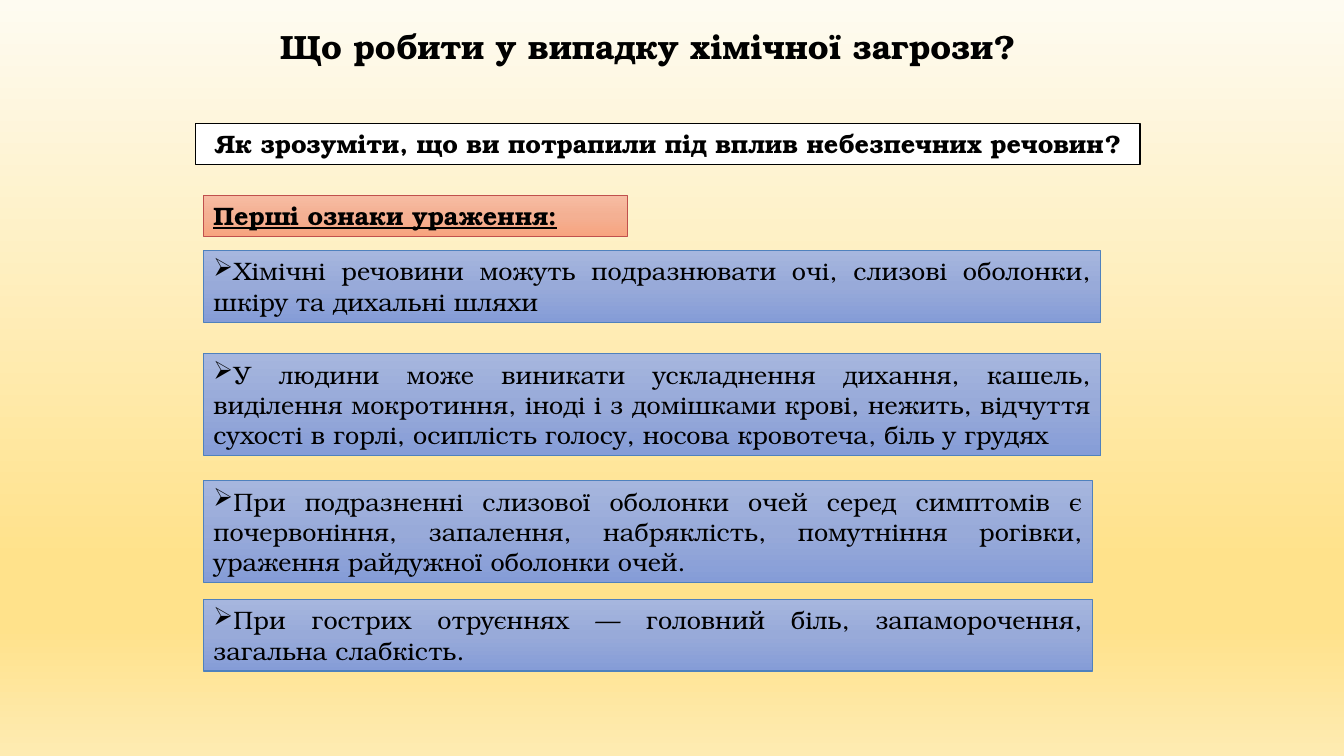
from lxml.etree import SubElement
from pptx import Presentation
from pptx.dml.color import RGBColor
from pptx.enum.shapes import MSO_SHAPE as Shape
from pptx.enum.text import MSO_ANCHOR as Anchor, PP_ALIGN as Align
from pptx.oxml.ns import qn
from pptx.util import Cm, Pt

FONT = "TeX Gyre Bonum"
BULLET_FONT = "Wingdings"
COLOURS = {
    "text": "000000",
    "question": "FFFFFF",
    "heading_line": "C0504D",
    "sign_line": "4F81BD",
}
GRADIENTS = {
    "page": [(0, "FEFBF1"), (74, "FFE28B"), (83, "FFE28B"), (100, "FEEBB2")],
    "heading": [(0, "F7BCA2"), (50, "F4B093"), (100, "F7A47F")],
    "sign": [(0, "A6B6DE"), (50, "98AAD9"), (100, "859CD7")],
}
COLUMN_LEFT = 5.13
SIGNS = [
    (6.32, 22.61, 1.8, "Хімічні речовини можуть подразнювати очі, слизові оболонки, "
     "шкіру та дихальні шляхи"),
    (8.92, 22.61, 2.57, "У людини може виникати ускладнення дихання, кашель, виділення "
     "мокротиння, іноді і з домішками крові, нежить, відчуття сухості в горлі, "
     "осиплість голосу, носова кровотеча, біль у грудях"),
    (12.12, 22.4, 2.57, "При подразненні слизової оболонки очей серед симптомів є "
     "почервоніння, запалення, набряклість, помутніння рогівки, ураження райдужної "
     "оболонки очей."),
    (15.11, 22.4, 1.8, "При гострих отруєннях — головний біль, запаморочення, "
     "загальна слабкість."),
]


def colour(name):
    return RGBColor.from_string(COLOURS[name])


def paint_gradient(fill, owner, name):
    fill.gradient()
    fill.gradient_angle = 270
    stops = owner.element.find(".//" + qn("a:gsLst"))
    for stop in list(stops):
        stops.remove(stop)
    for percent, shade in GRADIENTS[name]:
        stop = SubElement(stops, qn("a:gs"), pos=str(percent * 1000))
        SubElement(stop, qn("a:srgbClr"), val=shade)


def write(holder, text, size, align, bold=False, underline=None):
    frame = holder.text_frame
    frame.word_wrap = True
    frame.vertical_anchor = Anchor.TOP
    frame.text = text
    paragraph = frame.paragraphs[0]
    paragraph.alignment = align
    font = paragraph.runs[0].font
    font.name, font.size = FONT, Pt(size)
    font.bold, font.underline = bold, underline
    font.color.rgb = colour("text")
    return paragraph


def add_panel(slide, box, line, weight):
    panel = slide.shapes.add_shape(Shape.RECTANGLE, *map(Cm, box))
    panel.shadow.inherit = False
    panel.line.color.rgb = colour(line)
    panel.line.width = Pt(weight)
    return panel


def add_title(slide, box, text):
    title = slide.shapes.add_textbox(*map(Cm, box))
    write(title, text, 24, Align.CENTER, bold=True)


def add_question(slide, box, text):
    question = add_panel(slide, box, "text", 1)
    question.fill.solid()
    question.fill.fore_color.rgb = colour("question")
    write(question, text, 18, Align.CENTER, bold=True)


def add_heading(slide, box, text):
    heading = add_panel(slide, box, "heading_line", 0.75)
    paint_gradient(heading.fill, heading, "heading")
    write(heading, text, 18, Align.LEFT, bold=True, underline=True)


def add_sign(slide, box, text):
    sign = add_panel(slide, box, "sign_line", 0.75)
    paint_gradient(sign.fill, sign, "sign")
    paragraph = write(sign, text, 18, Align.JUSTIFY)
    bullet = paragraph._p.get_or_add_pPr()
    bullet.set("marL", "0")
    bullet.set("indent", str(-Cm(0.3)))
    tint = SubElement(bullet, qn("a:buClr"))
    SubElement(tint, qn("a:srgbClr"), val=COLOURS["text"])
    SubElement(bullet, qn("a:buFont"), typeface=BULLET_FONT, pitchFamily="2", charset="2")
    SubElement(bullet, qn("a:buChar"), char="Ø")


def main():
    deck = Presentation()
    deck.slide_width, deck.slide_height = Cm(33.87), Cm(19.05)
    slide = deck.slides.add_slide(deck.slide_layouts[6])
    paint_gradient(slide.background.fill, slide, "page")
    add_title(slide, (5.74, 0.53, 21.18, 1.27), "Що робити у випадку хімічної загрози?")
    add_question(slide, (4.93, 3.12, 23.8, 1.02),
                 "Як зрозуміти, що ви потрапили під вплив небезпечних речовин?")
    add_heading(slide, (COLUMN_LEFT, 4.93, 10.69, 1.02), "Перші ознаки ураження:")
    for top, width, height, text in SIGNS:
        add_sign(slide, (COLUMN_LEFT, top, width, height), text)
    deck.save("out.pptx")


if __name__ == "__main__":
    main()
